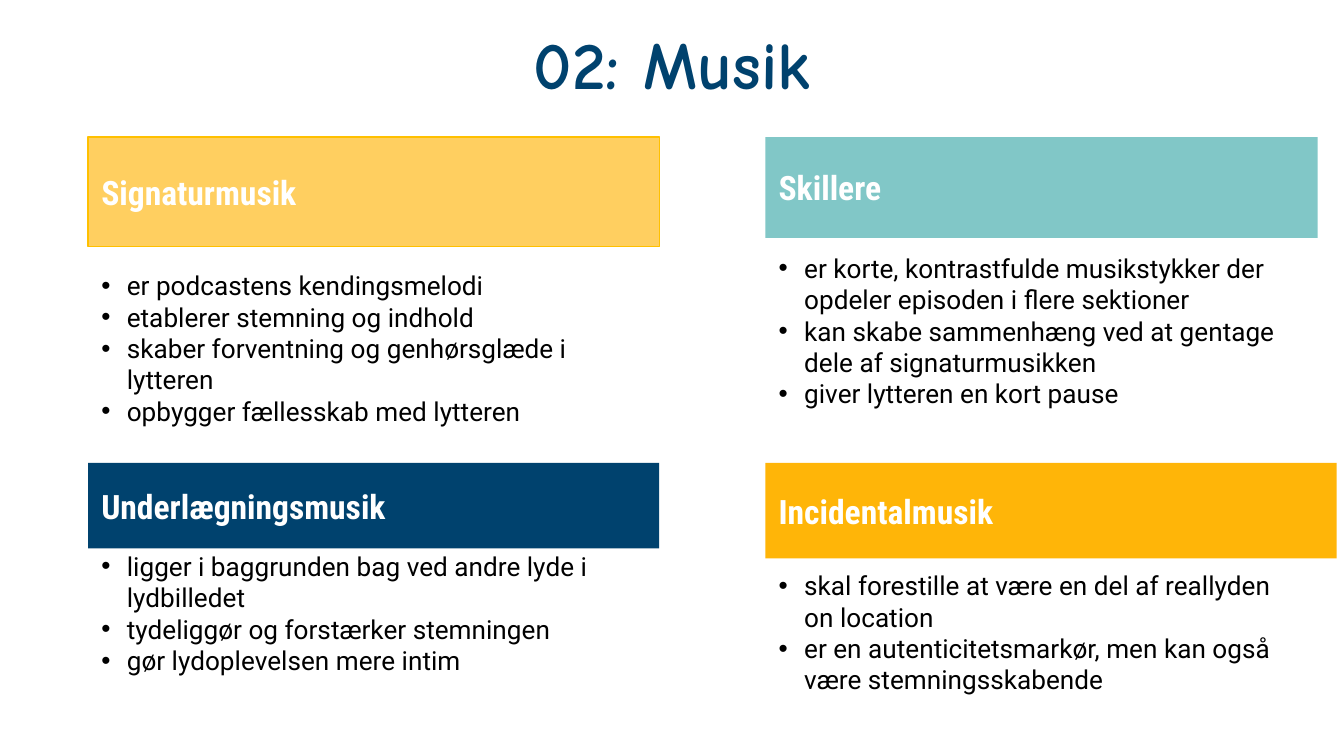
from dataclasses import dataclass

from lxml import etree
from pptx import Presentation
from pptx import util as u
from pptx.dml.color import RGBColor
from pptx.enum import shapes, text
from pptx.oxml import ns

PX = 4572  # EMU in one px, 200 px to the inch


@dataclass(frozen=True)
class Theme:
    navy: str = "00426E"
    sand: str = "FFCF60"
    gold: str = "FFC000"
    teal: str = "81C7C7"
    amber: str = "FFB508"
    white: str = "FFFFFF"
    black: str = "000000"
    title_font: str = "Comic Neue"
    heading_font: str = "Roboto Condensed"
    body_font: str = "Roboto"
    title_size: int = 36
    heading_size: int = 18
    body_size: int = 14


@dataclass(frozen=True)
class Area:
    left: int
    top: int
    width: int
    height: int

    def emu(self) -> tuple[int, ...]:
        return tuple(v * PX for v in (self.left, self.top, self.width, self.height))


@dataclass(frozen=True)
class Card:
    heading: str
    fill: str
    banner: Area
    body: Area
    points: tuple[str, ...]
    outline: str | None = None


THEME = Theme()
SLIDE_WIDTH, SLIDE_HEIGHT = 2000, 1125
LEFT, RIGHT = 131, 1139
UPPER, LOWER = 204, 689
WIDE, NARROW = 850, 822
INSET = 20
INDENT = 38

CARDS = (
    Card("Signaturmusik", THEME.sand,
         Area(LEFT, UPPER, WIDE, 163), Area(LEFT, 375, WIDE, 286),
         ("er podcastens kendingsmelodi",
          "etablerer stemning og indhold",
          "skaber forventning og genhørsglæde i lytteren",
          "opbygger fællesskab med lytteren"),
         outline=THEME.gold),
    Card("Skillere", THEME.teal,
         Area(RIGHT, UPPER, NARROW, 150), Area(RIGHT, 354, NARROW, 276),
         ("er korte, kontrastfulde musikstykker der opdeler episoden i flere sektioner",
          "kan skabe sammenhæng ved at gentage dele af signaturmusikken",
          "giver lytteren en kort pause")),
    Card("Incidentalmusik", THEME.amber,
         Area(RIGHT, LOWER, WIDE, 142), Area(RIGHT, 859, NARROW, 164),
         ("skal forestille at være en del af reallyden on location",
          "er en autenticitetsmarkør, men kan også være stemningsskabende")),
    Card("Underlægningsmusik", THEME.navy,
         Area(LEFT, LOWER, WIDE, 127), Area(LEFT, 801, WIDE, 222),
         ("ligger i baggrunden bag ved andre lyde i lydbilledet",
          "tydeliggør og forstærker stemningen",
          "gør lydoplevelsen mere intim")),
)


def set_frame(frame, content: str) -> None:
    """Fill a text frame and give it the slide's common insets and anchor."""
    frame.text = content
    frame.word_wrap = True
    frame.vertical_anchor = text.MSO_ANCHOR.MIDDLE
    frame.margin_left = frame.margin_right = INSET * PX
    frame.margin_top = frame.margin_bottom = INSET * PX


def style_paragraph(para, font: str, size: int, color: str, bold: bool = False,
                    align=text.PP_ALIGN.LEFT) -> None:
    para.alignment = align
    for span in para.runs:
        span.font.name = font
        span.font.size = u.Pt(size)
        span.font.bold = bold
        span.font.color.rgb = RGBColor.from_string(color)


def add_bullet(para) -> None:
    properties = para._p.get_or_add_pPr()
    properties.set("marL", str(INDENT * PX))
    properties.set("indent", str(-INDENT * PX))
    color = etree.SubElement(properties, ns.qn("a:buClr"))
    etree.SubElement(color, ns.qn("a:srgbClr"), val=THEME.black)
    etree.SubElement(properties, ns.qn("a:buFont"), typeface="Arial")
    etree.SubElement(properties, ns.qn("a:buChar"), char="•")


def draw_title(page, content: str, area: Area) -> None:
    box = page.shapes.add_textbox(*area.emu())
    set_frame(box.text_frame, content)
    style_paragraph(box.text_frame.paragraphs[0], THEME.title_font, THEME.title_size,
                    THEME.navy, bold=True, align=text.PP_ALIGN.CENTER)


def draw_body(page, card: Card) -> None:
    box = page.shapes.add_textbox(*card.body.emu())
    set_frame(box.text_frame, "\n".join(card.points))
    for para in box.text_frame.paragraphs:
        add_bullet(para)
        style_paragraph(para, THEME.body_font, THEME.body_size, THEME.black)


def draw_banner(page, card: Card) -> None:
    banner = page.shapes.add_shape(shapes.MSO_SHAPE.RECTANGLE, *card.banner.emu())
    banner.shadow.inherit = False
    banner.fill.solid()
    banner.fill.fore_color.rgb = RGBColor.from_string(card.fill)
    if card.outline:
        banner.line.color.rgb = RGBColor.from_string(card.outline)
        banner.line.width = u.Pt(0.75)
    else:
        banner.line.fill.background()
    set_frame(banner.text_frame, card.heading)
    style_paragraph(banner.text_frame.paragraphs[0], THEME.heading_font,
                    THEME.heading_size, THEME.white, bold=True)


def main() -> None:
    deck = Presentation()
    deck.slide_width, deck.slide_height = SLIDE_WIDTH * PX, SLIDE_HEIGHT * PX
    page = deck.slides.add_slide(deck.slide_layouts[6])
    draw_title(page, "02: Musik", Area(100, 48, 1800, 90))
    for card in CARDS:
        draw_body(page, card)
        draw_banner(page, card)
    deck.save("out.pptx")


if __name__ == "__main__":
    main()
